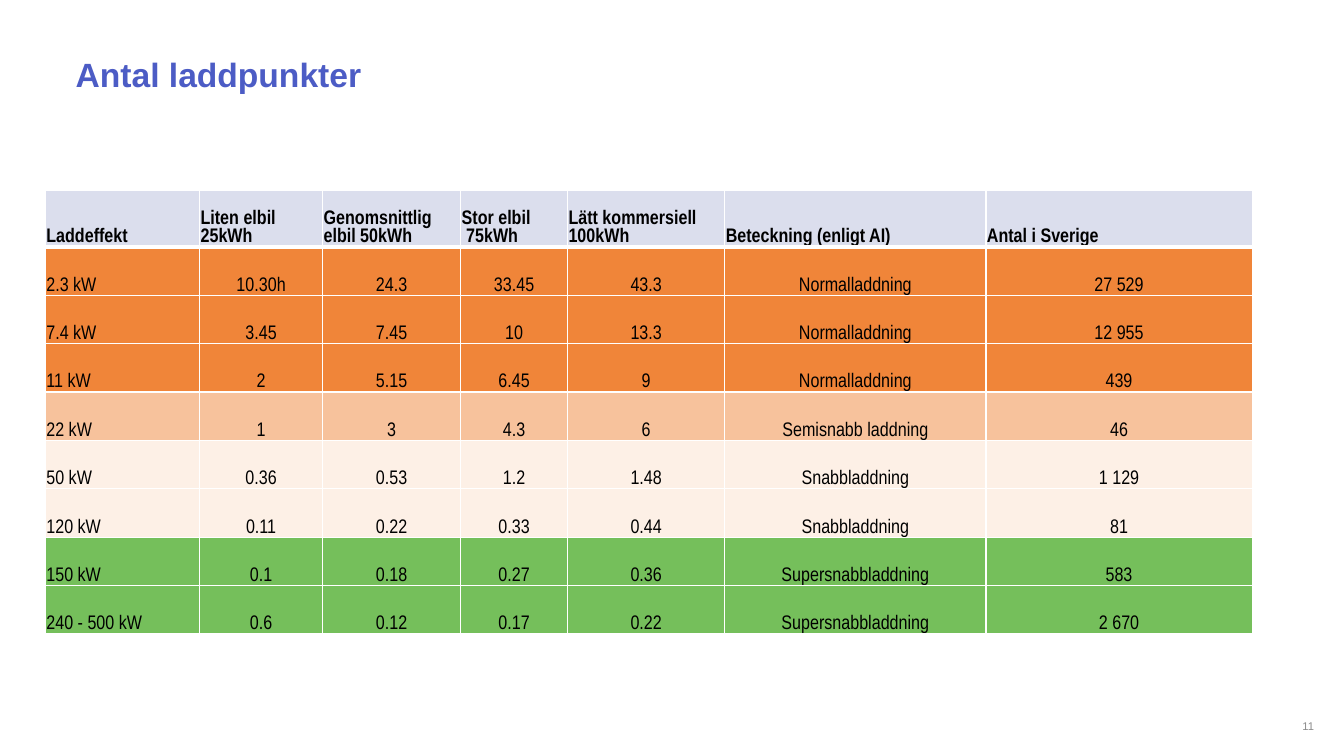
"""Build the slide "Antal laddpunkter" with its table of charging points."""
from dataclasses import dataclass

from lxml import etree
from pptx import Presentation
from pptx.dml.color import RGBColor
from pptx.enum.text import MSO_ANCHOR, MSO_AUTO_SIZE, PP_ALIGN
from pptx.oxml.ns import qn
from pptx.util import Pt

LEFT, CENTER = PP_ALIGN.LEFT, PP_ALIGN.CENTER
TOP, MIDDLE, BOTTOM = MSO_ANCHOR.TOP, MSO_ANCHOR.MIDDLE, MSO_ANCHOR.BOTTOM
NO_AUTOFIT = MSO_AUTO_SIZE.NONE
TITLE_ONLY = 5
EMU_PER_PX = 9144

BLUE, BLACK, GREY, WHITE = "4C5CC5", "000000", "8C8C8C", "FFFFFF"
HEADER_FILL, NORMAL, SEMI_FAST, FAST, SUPER_FAST = (
    "DBDEED", "F08539", "F7C29C", "FDF0E6", "75BF5B")


@dataclass(frozen=True)
class TextStyle:
    font: str
    size: int
    color: str
    bold: bool = False
    align: PP_ALIGN = LEFT


@dataclass(frozen=True)
class ChargingLevel:
    power: str
    hours: tuple[str, str, str, str]
    label: str
    count: str
    fill: str


TITLE_STYLE = TextStyle("Arial", 24, BLUE, bold=True)
HEADER_STYLE = TextStyle("Arial Narrow", 14, BLACK, bold=True)
POWER_STYLE = TextStyle("Arial Narrow", 14, BLACK)
VALUE_STYLE = TextStyle("Arial Narrow", 14, BLACK, align=CENTER)
NUMBER_STYLE = TextStyle("Arial", 8, GREY, align=CENTER)

HEADERS = ("Laddeffekt", "Liten elbil \n25kWh", "Genomsnittlig elbil 50kWh",
           "Stor elbil\n 75kWh", "Lätt kommersiell 100kWh",
           "Beteckning (enligt AI)", "Antal i Sverige")
COLUMN_WIDTHS = (153, 122, 137, 106, 156, 259, 264)
HEADER_HEIGHT, ROW_HEIGHT = 56, 48
LEVELS = (
    ChargingLevel("2.3 kW", ("10.30h", "24.3", "33.45", "43.3"),
                  "Normalladdning", "27 529", NORMAL),
    ChargingLevel("7.4 kW", ("3.45", "7.45", "10", "13.3"),
                  "Normalladdning", "12 955", NORMAL),
    ChargingLevel("11 kW", ("2", "5.15", "6.45", "9"),
                  "Normalladdning", "439", NORMAL),
    ChargingLevel("22 kW", ("1", "3", "4.3", "6"),
                  "Semisnabb laddning", "46", SEMI_FAST),
    ChargingLevel("50 kW", ("0.36", "0.53", "1.2", "1.48"),
                  "Snabbladdning", "1 129", FAST),
    ChargingLevel("120 kW", ("0.11", "0.22", "0.33", "0.44"),
                  "Snabbladdning", "81", FAST),
    ChargingLevel("150 kW", ("0.1", "0.18", "0.27", "0.36"),
                  "Supersnabbladdning", "583", SUPER_FAST),
    ChargingLevel("240 - 500 kW", ("0.6", "0.12", "0.17", "0.22"),
                  "Supersnabbladdning", "2 670", SUPER_FAST),
)


def px(length: int) -> int:
    return length * EMU_PER_PX


def rgb(color: str) -> RGBColor:
    return RGBColor.from_string(color)


def write(frame, text: str, style: TextStyle) -> None:
    paragraph = frame.paragraphs[0]
    paragraph.alignment = style.align
    for index, line in enumerate(text.split("\n")):
        if index:
            paragraph.add_line_break()
        run = paragraph.add_run()
        run.text = line
        run.font.name = style.font
        run.font.size = Pt(style.size)
        run.font.bold = style.bold
        run.font.color.rgb = rgb(style.color)


def set_frame(frame, anchor: MSO_ANCHOR, vertical_inset: int) -> None:
    frame.word_wrap = True
    frame.auto_size = NO_AUTOFIT
    frame.vertical_anchor = anchor
    frame.margin_left = frame.margin_right = 0
    frame.margin_top = frame.margin_bottom = px(vertical_inset)


def set_borders(cell, top: int, bottom: int) -> None:
    properties = cell._tc.get_or_add_tcPr()
    widths = {"a:lnL": 1, "a:lnR": 1, "a:lnT": top, "a:lnB": bottom}
    for position, (tag, width) in enumerate(widths.items()):
        border = etree.Element(qn(tag), w=str(Pt(width)))
        fill = etree.SubElement(border, qn("a:solidFill"))
        etree.SubElement(fill, qn("a:srgbClr"), val=WHITE)
        properties.insert(position, border)


def fill_cell(cell, text: str, style: TextStyle, fill: str) -> None:
    cell.vertical_anchor = BOTTOM
    cell.margin_left = cell.margin_right = cell.margin_top = px(1)
    cell.margin_bottom = 0
    cell.fill.solid()
    cell.fill.fore_color.rgb = rgb(fill)
    write(cell.text_frame, text, style)


def add_charging_table(slide) -> None:
    heights = [HEADER_HEIGHT] + [ROW_HEIGHT] * len(LEVELS)
    table = slide.shapes.add_table(
        len(heights), len(HEADERS), px(45), px(189),
        px(sum(COLUMN_WIDTHS)), px(sum(heights))).table
    table.horz_banding = False
    for column, width in zip(table.columns, COLUMN_WIDTHS):
        column.width = px(width)
    for row, height in zip(table.rows, heights):
        row.height = px(height)
    for column, header in enumerate(HEADERS):
        cell = table.cell(0, column)
        fill_cell(cell, header, HEADER_STYLE, HEADER_FILL)
        set_borders(cell, top=1, bottom=3)
    for row, level in enumerate(LEVELS, start=1):
        values = (level.power, *level.hours, level.label, level.count)
        for column, value in enumerate(values):
            cell = table.cell(row, column)
            style = VALUE_STYLE if column else POWER_STYLE
            fill_cell(cell, value, style, level.fill)
            set_borders(cell, top=3 if row == 1 else 1, bottom=1)


def main() -> None:
    deck = Presentation()
    deck.slide_width, deck.slide_height = px(1333), px(750)
    slide = deck.slides.add_slide(deck.slide_layouts[TITLE_ONLY])

    title = slide.shapes.title
    title.left, title.top, title.width, title.height = map(px, (75, 48, 908, 83))
    set_frame(title.text_frame, TOP, 5)
    write(title.text_frame, "Antal laddpunkter", TITLE_STYLE)

    add_charging_table(slide)

    page_number = slide.shapes.add_textbox(*map(px, (1273, 706, 49, 28)))
    set_frame(page_number.text_frame, MIDDLE, 0)
    write(page_number.text_frame, "11", NUMBER_STYLE)

    deck.save("out.pptx")


if __name__ == "__main__":
    main()
